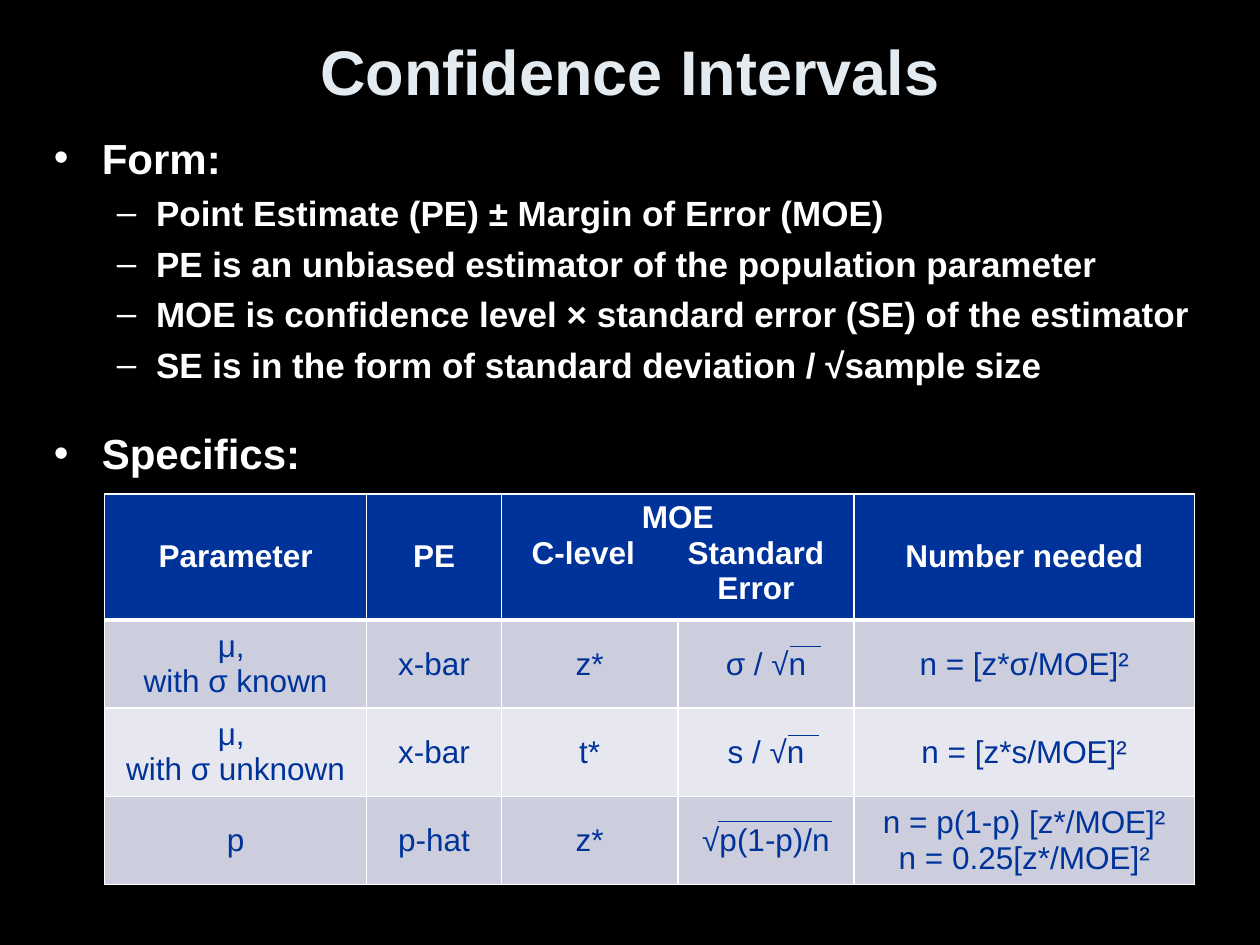
from lxml.etree import SubElement
from pptx import Presentation
from pptx.dml.color import RGBColor
from pptx.enum.shapes import MSO_CONNECTOR as Connector
from pptx.enum.text import MSO_ANCHOR as Anchor, PP_ALIGN as Align
from pptx.oxml.ns import qn
from pptx.util import Inches, Pt

COLORS = {
    "background": "000000",
    "title": "E3EBF1",
    "white": "FFFFFF",
    "blue": "003399",
    "band_dark": "CCCEDE",
    "band_light": "E7E8EF",
}
OUTLINE = [
    (0, "Form:", 5),
    (1, "Point Estimate (PE) ± Margin of Error (MOE)", 5),
    (1, "PE is an unbiased estimator of the population parameter", 5),
    (1, "MOE is confidence level × standard error (SE) of the estimator", 5),
    (1, "SE is in the form of standard deviation / √sample size", 5),
    (0, "Specifics:", 24),
]
LEVELS = [
    {"size": 24, "bullet": "•", "margin": 0.38, "indent": -0.38},
    {"size": 20, "bullet": "–", "margin": 0.81, "indent": -0.31},
]
COLUMN_WIDTHS = [2.08, 1.07, 1.4, 1.4, 2.7]
ROW_HEIGHTS = [1, 0.7, 0.7, 0.7]
ROWS = [
    ["Parameter", "PE", "MOE\n\tC-level\tStandard\v\t\tError", "", "Number needed"],
    ["μ, \vwith σ known", "x-bar", "z*", "σ / √n", "n = [z*σ/MOE]²"],
    ["μ, \vwith σ unknown", "x-bar", "t*", "s / √n", "n = [z*s/MOE]²"],
    ["p", "p-hat", "z*", "√p(1-p)/n", "n = p(1-p) [z*/MOE]²\nn = 0.25[z*/MOE]²"],
]
MOE_TABS = [0.55, 1.92]
RADICAL_BARS = [(6.27, 6.52, 5.13), (6.25, 6.5, 5.84), (5.7, 6.6, 6.52)]


def rgb(name):
    return RGBColor.from_string(COLORS[name])


def format_paragraph(paragraph, size, color, bold, **layout):
    for run in paragraph.runs:
        for key, value in {"name": "Arial", "size": Pt(size), "bold": bold}.items():
            setattr(run.font, key, value)
        run.font.color.rgb = rgb(color)
    for key, value in layout.items():
        setattr(paragraph, key, value)


def add_text_box(slide, left, top, width, height, anchor):
    box = slide.shapes.add_textbox(Inches(left), Inches(top), Inches(width), Inches(height))
    box.text_frame.word_wrap = True
    box.text_frame.vertical_anchor = anchor
    return box.text_frame


def add_title(slide):
    frame = add_text_box(slide, 0.5, 0.14, 9, 0.83, Anchor.MIDDLE)
    frame.text = "Confidence Intervals"
    format_paragraph(frame.paragraphs[0], 36, "title", True, alignment=Align.CENTER)


def add_outline(slide):
    frame = add_text_box(slide, 0.33, 1, 9.25, 3.17, Anchor.TOP)
    frame.text = "\n".join(text for _, text, _ in OUTLINE)
    for paragraph, (level, _, space) in zip(frame.paragraphs, OUTLINE):
        style = LEVELS[level]
        format_paragraph(paragraph, style["size"], "white", True, level=level, space_before=Pt(space))
        properties = paragraph._p.get_or_add_pPr()
        properties.set("marL", str(Inches(style["margin"])))
        properties.set("indent", str(Inches(style["indent"])))
        SubElement(properties, qn("a:buFont"), typeface="Arial")
        SubElement(properties, qn("a:buChar"), char=style["bullet"])


def set_borders(cell, widths):
    properties = cell._tc.get_or_add_tcPr()
    for side, width in widths.items():
        line = SubElement(properties, qn(f"a:ln{side}"), w=str(Pt(width)))
        fill = SubElement(line, qn("a:solidFill"))
        SubElement(fill, qn("a:srgbClr"), val=COLORS["white"])


def set_center_tabs(paragraph, positions):
    paragraph.alignment = Align.LEFT
    tabs = SubElement(paragraph._p.get_or_add_pPr(), qn("a:tabLst"))
    for position in positions:
        SubElement(tabs, qn("a:tab"), pos=str(Inches(position)), algn="ctr")


def format_cell(cell, row, text):
    header = row == 0
    set_borders(cell, {"L": 1, "R": 1, "T": 3 if row == 1 else 1, "B": 3 if header else 1})
    cell.fill.solid()
    cell.fill.fore_color.rgb = rgb("blue" if header else "band_dark" if row % 2 else "band_light")
    cell.vertical_anchor = Anchor.MIDDLE
    cell.text_frame.text = text
    for paragraph in cell.text_frame.paragraphs:
        format_paragraph(paragraph, 18, "white" if header else "blue", header, alignment=Align.CENTER)


def add_interval_table(slide):
    frame = slide.shapes.add_table(
        len(ROWS), len(COLUMN_WIDTHS), Inches(0.83), Inches(3.92),
        Inches(sum(COLUMN_WIDTHS)), Inches(sum(ROW_HEIGHTS)))
    table = frame.table
    for column, width in zip(table.columns, COLUMN_WIDTHS):
        column.width = Inches(width)
    for row, height in zip(table.rows, ROW_HEIGHTS):
        row.height = Inches(height)
    for row, texts in enumerate(ROWS):
        for column, text in enumerate(texts):
            format_cell(table.cell(row, column), row, text)
    moe = table.cell(0, 2)
    moe.merge(table.cell(0, 3))
    moe.vertical_anchor = Anchor.TOP
    set_center_tabs(moe.text_frame.paragraphs[1], MOE_TABS)


def add_radical_bar(slide, start, end, y):
    bar = slide.shapes.add_connector(
        Connector.STRAIGHT, Inches(start), Inches(y), Inches(end), Inches(y))
    bar.line.color.rgb = rgb("blue")
    bar.line.width = Pt(0.75)
    SubElement(bar._element.spPr, qn("a:effectLst"))


def main():
    presentation = Presentation()
    presentation.slide_width, presentation.slide_height = Inches(10), Inches(7.5)
    slide = presentation.slides.add_slide(presentation.slide_layouts[6])
    slide.background.fill.solid()
    slide.background.fill.fore_color.rgb = rgb("background")
    add_title(slide)
    add_outline(slide)
    add_interval_table(slide)
    for start, end, y in RADICAL_BARS:
        add_radical_bar(slide, start, end, y)
    presentation.save("out.pptx")


if __name__ == "__main__":
    main()
